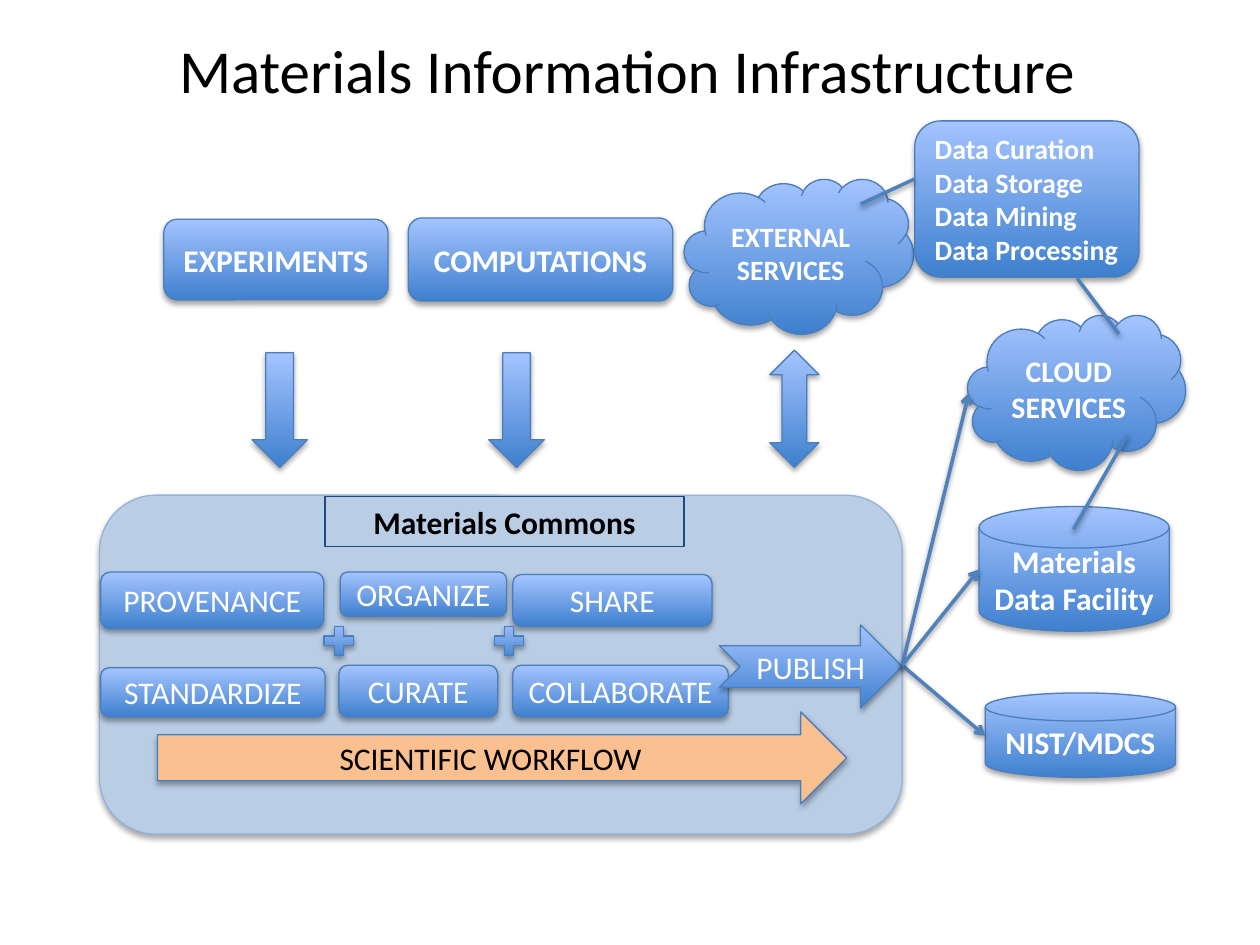
from lxml.etree import SubElement
from pptx import Presentation
from pptx.dml.color import RGBColor
from pptx.enum.shapes import MSO_CONNECTOR, MSO_SHAPE as Kind
from pptx.enum.text import MSO_ANCHOR as Anchor, PP_ALIGN as Align
from pptx.oxml.ns import qn
from pptx.util import Emu, Inches, Pt

THEME = {
    "font": "Calibri", "title": 34.9, "label": 18, "cloud": 17, "small": 16,
    "black": "000000", "white": "FFFFFF", "gradient": ("3F80CE", "A4C4FF"),
    "edge": "4B7EBC", "connector": "4F81BD", "panel": "B9CDE5",
    "panel_edge": "95B3D7", "workflow": "FAC090", "caption_edge": "1F497D",
}

TITLE = ("Materials Information Infrastructure", (1.01, 0.22, 7.94, 0.66))
PANEL = (0.79, 3.93, 6.37, 2.69)
WORKFLOW = ("SCIENTIFIC WORKFLOW", (1.25, 5.65, 5.47, 0.73))
CAPTION = ("Materials Commons", (2.58, 3.94, 2.85, 0.4))

ACTIVITIES = [
    ("STANDARDIZE", (0.8, 5.3, 1.78, 0.39)),
    ("CURATE", (2.69, 5.28, 1.26, 0.41)),
    ("COLLABORATE", (4.07, 5.28, 1.71, 0.41)),
    ("PROVENANCE", (0.8, 4.54, 1.77, 0.45)),
    ("SHARE", (4.07, 4.56, 1.58, 0.41)),
    ("ORGANIZE", (2.7, 4.54, 1.32, 0.35)),
]
SOURCES = [
    ("EXPERIMENTS", (1.3, 1.74, 1.78, 0.64)),
    ("COMPUTATIONS", (3.24, 1.73, 2.1, 0.66)),
]
CLOUDS = [
    ("CLOUD SERVICES", (7.68, 2.5, 1.73, 1.23), THEME["cloud"]),
    ("EXTERNAL SERVICES", (5.43, 1.42, 1.82, 1.23), THEME["small"]),
]
REPOSITORIES = [
    ("NIST/MDCS", (7.82, 5.5, 1.51, 0.67)),
    ("Materials Data Facility", (7.77, 4.02, 1.51, 0.99)),
]
SYMBOLS = [
    (Kind.UP_DOWN_ARROW, (6.11, 2.78, 0.39, 0.93)),
    (Kind.DOWN_ARROW, (3.88, 2.8, 0.44, 0.91)),
    (Kind.DOWN_ARROW, (2, 2.8, 0.44, 0.91)),
    (Kind.MATH_PLUS, (3.88, 4.93, 0.32, 0.31)),
    (Kind.MATH_PLUS, (2.53, 4.93, 0.32, 0.31)),
]
PUBLISH = ("PUBLISH", (5.71, 4.96, 1.45, 0.66))
DATA_TASKS = (
    "Data Curation\nData Storage\nData Mining\nData Processing",
    (7.26, 0.96, 1.78, 1.24),
)
PUBLISH_TIP = (7.16, 5.28)
PUBLISH_TARGETS = [(7.69, 3.12), (7.82, 5.84), (7.77, 4.52)]
LINKS = [
    ((7.26, 1.42), (6.83, 1.62)),
    ((8.55, 2.21), (8.88, 2.65)),
    ((8.95, 3.45), (8.52, 4.2)),
]


def color(name):
    return RGBColor.from_string(THEME.get(name, name))


def write(shape, text, size=THEME["label"], ink="white", bold=False,
          align=Align.CENTER, anchor=Anchor.MIDDLE):
    frame = shape.text_frame
    frame.word_wrap = True
    frame.vertical_anchor = anchor
    frame.text = text
    for para in frame.paragraphs:
        para.alignment = align
        font = para.runs[0].font
        font.name, font.size, font.bold = THEME["font"], Pt(size), bold
        font.color.rgb = color(ink)


def add_shadow(shape, distance, opacity):
    effects = SubElement(shape._element.spPr, qn("a:effectLst"))
    shadow = SubElement(effects, qn("a:outerShdw"), blurRad=str(Pt(3.1)),
                        dist=str(Pt(distance)), dir="5400000", rotWithShape="0")
    black = SubElement(shadow, qn("a:srgbClr"), val=THEME["black"])
    SubElement(black, qn("a:alpha"), val=str(opacity * 1000))


def add_box(slide, kind, place, text="", fill="gradient", edge="edge", **style):
    box = slide.shapes.add_shape(kind, *map(Inches, place))
    if fill == "gradient":
        box.fill.gradient()
        box.fill.gradient_angle = 90
        for stop, tone in zip(box.fill.gradient_stops, THEME["gradient"]):
            stop.color.rgb = color(tone)
    elif fill:
        box.fill.solid()
        box.fill.fore_color.rgb = color(fill)
    else:
        box.fill.background()
    box.line.color.rgb = color(edge)
    box.line.width = Pt(0.75)
    if fill:
        add_shadow(box, 1.8, 35)
    else:
        box.shadow.inherit = False
    if text:
        write(box, text, **style)


def add_line(slide, start, end, arrow=False):
    line = slide.shapes.add_connector(
        MSO_CONNECTOR.STRAIGHT, *map(Inches, start + end))
    line.line.color.rgb = color("connector")
    line.line.width = Pt(2)
    if arrow:
        SubElement(line.line._get_or_add_ln(), qn("a:tailEnd"), type="arrow")
    add_shadow(line, 1.6, 38)


def main():
    deck = Presentation()
    deck.slide_width, deck.slide_height = Inches(10), Inches(7.5)
    slide = deck.slides.add_slide(deck.slide_layouts[5])

    text, place = TITLE
    title = slide.shapes.title
    title.left, title.top, title.width, title.height = map(Inches, place)
    write(title, text, size=THEME["title"], ink="black")

    add_box(slide, Kind.ROUNDED_RECTANGLE, PANEL, fill="panel", edge="panel_edge")
    text, place = WORKFLOW
    add_box(slide, Kind.RIGHT_ARROW, place, text, fill="workflow", ink="black")

    for text, place in ACTIVITIES:
        add_box(slide, Kind.ROUNDED_RECTANGLE, place, text)
    for text, place, size in CLOUDS:
        add_box(slide, Kind.CLOUD, place, text, size=size, bold=True)
    for text, place in REPOSITORIES:
        add_box(slide, Kind.FLOWCHART_MAGNETIC_DISK, place, text, bold=True)
    for text, place in SOURCES:
        add_box(slide, Kind.ROUNDED_RECTANGLE, place, text, bold=True)
    for kind, place in SYMBOLS:
        add_box(slide, kind, place)

    text, place = PUBLISH
    add_box(slide, Kind.NOTCHED_RIGHT_ARROW, place, text)
    text, place = DATA_TASKS
    add_box(slide, Kind.ROUNDED_RECTANGLE, place, text, size=THEME["small"],
            bold=True, align=Align.LEFT)

    for target in PUBLISH_TARGETS:
        add_line(slide, PUBLISH_TIP, target, arrow=True)
    for start, end in LINKS:
        add_line(slide, start, end)

    text, place = CAPTION
    add_box(slide, Kind.RECTANGLE, place, text, fill=None, edge="caption_edge",
            ink="black", bold=True, anchor=Anchor.TOP)
    deck.save("out.pptx")


if __name__ == "__main__":
    main()
